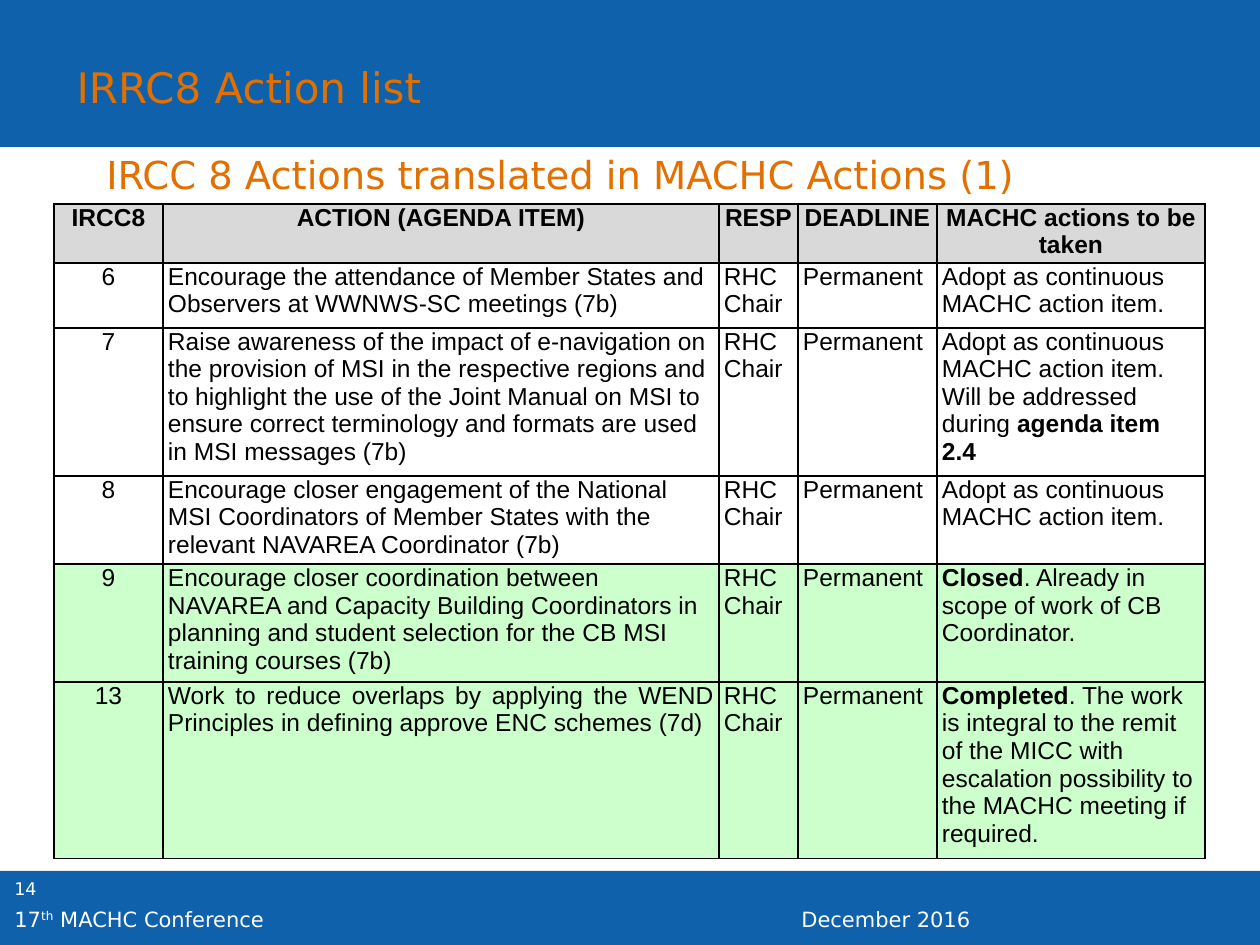
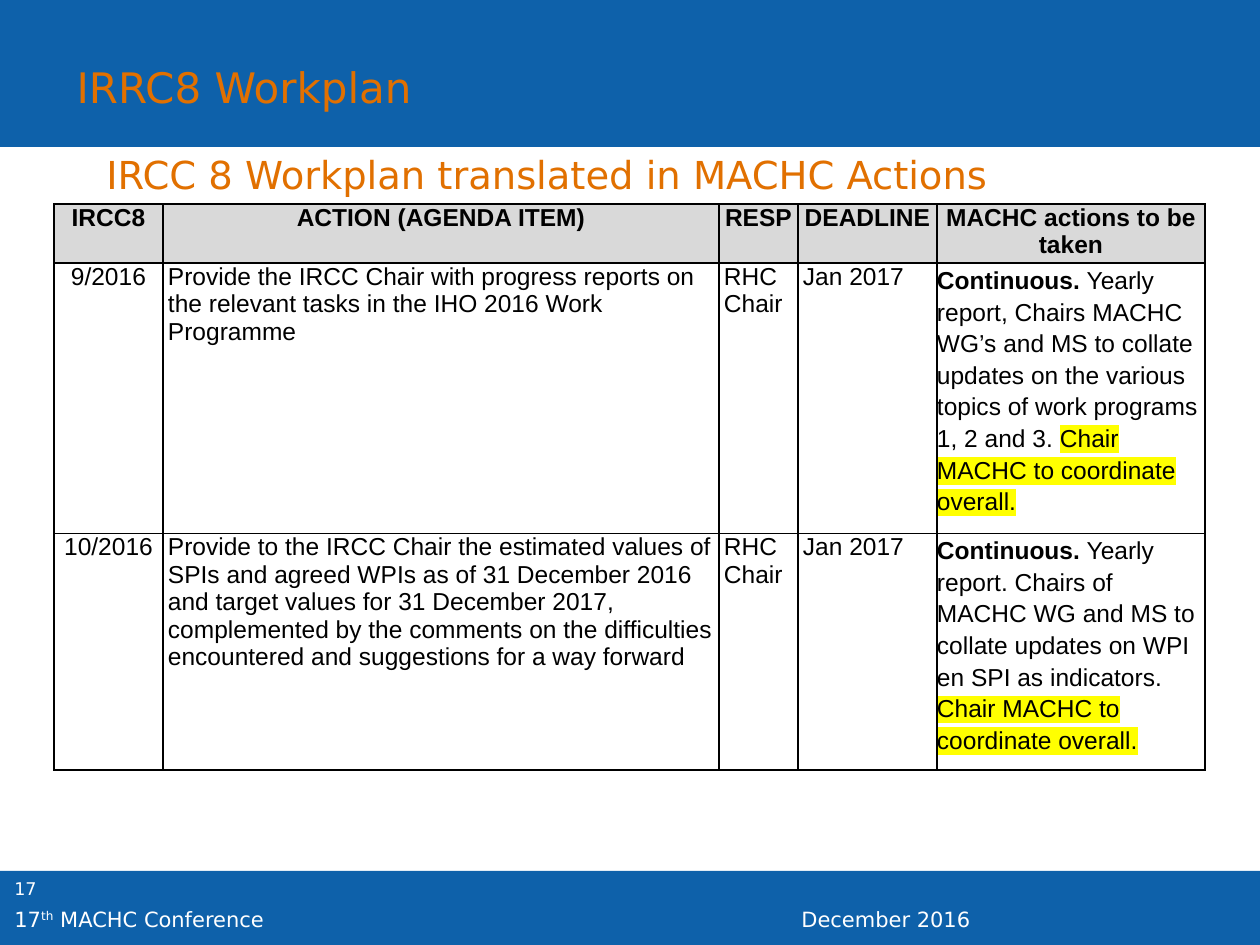
"""Build the two IRCC 8 slides with their action tables."""
from dataclasses import dataclass
from typing import NamedTuple

from lxml import etree
from pptx import Presentation
from pptx import util as u
from pptx.dml.color import RGBColor
from pptx.enum import shapes, text
from pptx.oxml import ns

PX = 914400 / 126
BLUE, ORANGE, WHITE, BLACK = "0E61AA", "E17000", "FFFFFF", "000000"
GREY, GREEN, YELLOW = "D9D9D9", "CCFFCC", "FFFF00"
SANS, ARIAL = "DejaVu Sans", "Arial"
CENTER, LEFT, JUSTIFY = text.PP_ALIGN.CENTER, text.PP_ALIGN.LEFT, text.PP_ALIGN.JUSTIFY
COLUMNS = [("IRCC8", 109), ("ACTION (AGENDA ITEM)", 556), ("RESP", 79),
           ("DEADLINE", 139), ("MACHC actions to be taken", 268)]
HEADER_HEIGHT = 59


class Box(NamedTuple):
    left: int
    top: int
    width: int
    height: int


class Run(NamedTuple):
    text: str
    bold: bool = False
    highlight: str = ""
    superscript: bool = False


@dataclass
class Action:
    number: str
    action: str
    deadline: str
    taken: list[Run]
    height: int
    fill: str = WHITE
    align: text.PP_ALIGN = LEFT


@dataclass
class ActionSlide:
    title: str
    subtitle: str
    page: str
    actions: list[Action]
    title_width: int
    subtitle_width: int
    taken_margin: int = 5
    taken_spacing: float = 1.0


BANDS = [Box(0, 871, 1260, 74), Box(0, 0, 1260, 147)]
ADOPT = "Adopt as continuous MACHC action item."
COORDINATE = Run("Chair MACHC to coordinate overall.", highlight=YELLOW)
CONTINUOUS = Run("Continuous.", bold=True)

SLIDES = [
    ActionSlide(
        "IRRC8 Action list", "IRCC 8 Actions translated in MACHC Actions (1)", "14",
        [
            Action("6", "Encourage the attendance of Member States and Observers at "
                   "WWNWS-SC meetings (7b)", "Permanent", [Run(ADOPT)], 65),
            Action("7", "Raise awareness of the impact of e-navigation on the provision of "
                   "MSI in the respective regions and to highlight the use of the Joint "
                   "Manual on MSI to ensure correct terminology and formats are used in "
                   "MSI messages (7b)", "Permanent",
                   [Run(ADOPT + " Will be addressed during "),
                    Run("agenda item 2.4", bold=True)], 148),
            Action("8", "Encourage closer engagement of the National MSI Coordinators of "
                   "Member States with the relevant NAVAREA Coordinator (7b)",
                   "Permanent", [Run(ADOPT)], 88),
            Action("9", "Encourage closer coordination between NAVAREA and Capacity "
                   "Building Coordinators in planning and student selection for the CB "
                   "MSI training courses (7b)", "Permanent",
                   [Run("Closed", bold=True),
                    Run(". Already in scope of work of CB Coordinator.")], 118, GREEN),
            Action("13", "Work to reduce overlaps by applying the WEND Principles in "
                   "defining approve ENC schemes (7d)", "Permanent",
                   [Run("Completed", bold=True),
                    Run(". The work is integral to the remit of the MICC with escalation "
                        "possibility to the MACHC meeting if required.")],
                   176, GREEN, JUSTIFY),
        ], 384, 960),
    ActionSlide(
        "IRRC8 Workplan", "IRCC 8 Workplan translated in MACHC Actions", "17",
        [
            Action("9/2016", "Provide the IRCC Chair with progress reports on the relevant "
                   "tasks in the IHO 2016 Work Programme", "Jan 2017",
                   [CONTINUOUS,
                    Run(" Yearly report, Chairs MACHC WG’s and MS to collate updates on "
                        "the various topics of work programs 1, 2 and 3. "),
                    COORDINATE], 270),
            Action("10/2016", "Provide to the IRCC Chair the estimated values of SPIs and "
                   "agreed WPIs as of 31 December 2016 and target values for 31 December "
                   "2017, complemented by the comments on the difficulties encountered and "
                   "suggestions for a way forward", "Jan 2017",
                   [CONTINUOUS,
                    Run(" Yearly report. Chairs of MACHC WG and MS to collate updates on "
                        "WPI en SPI as indicators. "),
                    COORDINATE], 236),
        ], 374, 927, taken_margin=0, taken_spacing=1.15),
]


def px(length: int) -> u.Emu:
    """Turn pixels into EMU."""
    return u.Emu(round(length * PX))


def emu(box: Box) -> list[u.Emu]:
    """Turn a box into EMU lengths."""
    return [px(length) for length in box]


def rgb(color: str) -> RGBColor:
    """Turn a hex string into a colour."""
    return RGBColor.from_string(color)


def write(p, runs: list[Run], size: int, color: str, font: str, bold: bool = False) -> None:
    """Fill a paragraph with runs that share one font."""
    p.font.size, p.font.name, p.font.bold = u.Pt(size), font, bold
    p.font.color.rgb = rgb(color)
    for run in runs:
        r = p.add_run()
        r.text = run.text
        if run.bold:
            r.font.bold = True
        rPr = r._r.get_or_add_rPr()
        if run.superscript:
            rPr.set("baseline", "30000")
        if run.highlight:
            mark = etree.SubElement(rPr, ns.qn("a:highlight"))
            etree.SubElement(mark, ns.qn("a:srgbClr"), val=run.highlight)


def add_text(s, box: Box, runs: list[Run], size: int, color: str, wrap: bool = True) -> None:
    """Add a text box with one paragraph."""
    tf = s.shapes.add_textbox(*emu(box)).text_frame
    tf.word_wrap = wrap
    write(tf.paragraphs[0], runs, size, color, SANS)


def add_frame(s, page: str) -> None:
    """Draw the bands and the footer texts."""
    for band in BANDS:
        sp = s.shapes.add_shape(shapes.MSO_SHAPE.RECTANGLE, *emu(band))
        sp.shadow.inherit = False
        sp.fill.solid()
        sp.fill.fore_color.rgb = rgb(BLUE)
        sp.line.fill.background()
    conference = [Run("17"), Run("th", superscript=True), Run(" MACHC Conference")]
    add_text(s, Box(2, 872, 98, 50), [Run(page)], 10, WHITE)
    add_text(s, Box(789, 900, 471, 30), [Run("December 2016")], 12, WHITE)
    add_text(s, Box(2, 900, 552, 30), conference, 12, WHITE)


def set_title(s, title: str, width: int) -> None:
    """Place the title placeholder above the top band."""
    sp = s.shapes.title
    sp.left, sp.top, sp.width, sp.height = emu(Box(64, 55, width, 63))
    sp.element.getparent().append(sp.element)
    tf = sp.text_frame
    tf.word_wrap = False
    tf.auto_size = text.MSO_AUTO_SIZE.SHAPE_TO_FIT_TEXT
    tf.vertical_anchor = text.MSO_ANCHOR.TOP
    p = tf.paragraphs[0]
    p.alignment = LEFT
    write(p, [Run(title)], 24, ORANGE, SANS)


def set_cell(cell, runs: list[Run], fill: str, align: text.PP_ALIGN, bold: bool = False,
             margin: int = 5, spacing: float = 1.0) -> None:
    """Write, border and fill a table cell."""
    tcPr = cell._tc.get_or_add_tcPr()
    for side in ("lnL", "lnR", "lnT", "lnB"):
        line = etree.SubElement(tcPr, ns.qn(f"a:{side}"), w=str(u.Pt(1)))
        solid = etree.SubElement(line, ns.qn("a:solidFill"))
        etree.SubElement(solid, ns.qn("a:srgbClr"), val=BLACK)
    cell.fill.solid()
    cell.fill.fore_color.rgb = rgb(fill)
    cell.margin_left = cell.margin_right = px(margin)
    cell.margin_top = cell.margin_bottom = 0
    p = cell.text_frame.paragraphs[0]
    p.alignment, p.line_spacing, p.space_after = align, spacing, u.Pt(2)
    write(p, runs, 14, BLACK, ARIAL, bold)


def add_actions(s, page: ActionSlide) -> None:
    """Add the table of actions."""
    heights = [HEADER_HEIGHT] + [action.height for action in page.actions]
    box = Box(54, 204, sum(width for _, width in COLUMNS), sum(heights))
    table = s.shapes.add_table(len(heights), len(COLUMNS), *emu(box)).table
    table.first_row = table.horz_banding = False
    for row, height in zip(table.rows, heights):
        row.height = px(height)
    for i, (heading, width) in enumerate(COLUMNS):
        table.columns[i].width = px(width)
        set_cell(table.cell(0, i), [Run(heading)], GREY, CENTER, bold=True)
    for i, action in enumerate(page.actions, 1):
        plain = [(action.number, CENTER), (action.action, action.align),
                 ("RHC Chair", LEFT), (action.deadline, LEFT)]
        for j, (words, align) in enumerate(plain):
            set_cell(table.cell(i, j), [Run(words)], action.fill, align)
        set_cell(table.cell(i, len(plain)), action.taken, action.fill, LEFT,
                 margin=page.taken_margin, spacing=page.taken_spacing)


def main() -> None:
    """Build and save the slides."""
    prs = Presentation()
    prs.slide_width, prs.slide_height = px(1260), px(945)
    for page in SLIDES:
        s = prs.slides.add_slide(prs.slide_layouts[5])
        add_frame(s, page.page)
        add_text(s, Box(94, 145, page.subtitle_width, 59), [Run(page.subtitle)], 22,
                 ORANGE, wrap=False)
        add_actions(s, page)
        set_title(s, page.title, page.title_width)
    prs.save("out.pptx")


if __name__ == "__main__":
    main()
